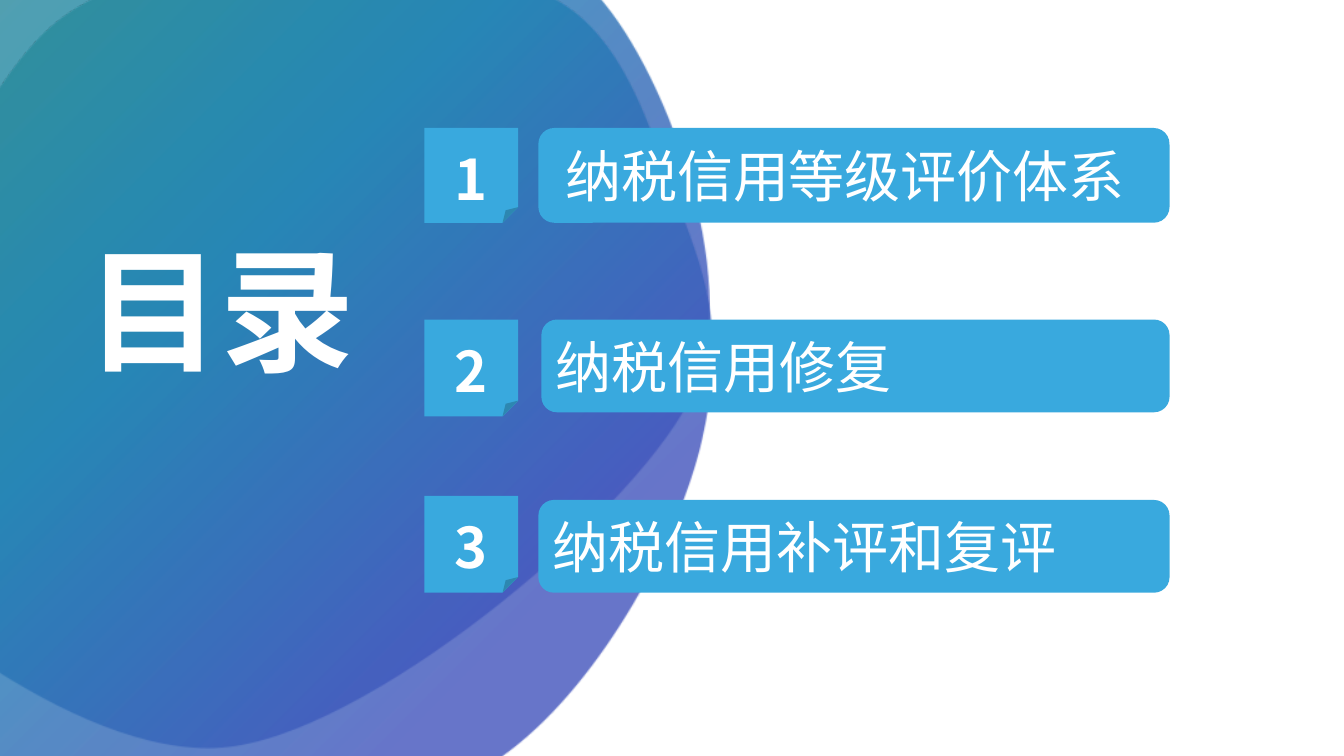
from lxml import etree
from pptx import Presentation
from pptx.dml.color import RGBColor
from pptx.enum.shapes import MSO_SHAPE
from pptx.enum.text import MSO_ANCHOR, MSO_AUTO_SIZE, PP_ALIGN
from pptx.oxml.ns import qn
from pptx.util import Inches, Pt

FOLDED, ROUNDED = MSO_SHAPE.FOLDED_CORNER, MSO_SHAPE.ROUNDED_RECTANGLE
LEFT, CENTER = PP_ALIGN.LEFT, PP_ALIGN.CENTER
MIDDLE, NO_AUTOFIT = MSO_ANCHOR.MIDDLE, MSO_AUTO_SIZE.NONE
TITLE_ONLY = 5
FONT = "Noto Sans CJK SC"
COLORS = {"white": "FFFFFF", "card": "39A9DE", "green": "30918B",
          "teal": "1E83B3", "indigo": "4355BE"}
GRADIENT = [(0, "green"), (40, "teal"), (75, "indigo"), (100, "indigo")]
OPACITY = 80

BACK_BLOB = [
    (-1.95, 2.53),
    (-1.8, 1.75), (-1.62, 1.2), (-0.91, 0.49),
    (-0.2, -0.21), (1.21, -0.98), (2.34, -1.08),
    (3.47, -1.18), (5.15, -0.82), (5.86, -0.11),
    (6.57, 0.6), (7.38, 2.76), (6.88, 3.88),
    (6.39, 5), (3.79, 7.18), (2.34, 7.4),
    (0.89, 7.63), (-1.11, 5.93), (-1.82, 5.22),
    (-2.52, 4.52), (-2.11, 3.32), (-1.95, 2.53),
]
FRONT_BLOB = [
    (6.74, 2.08),
    (7.04, 2.82), (7.18, 3.38), (6.96, 4.36),
    (6.74, 5.33), (5.97, 6.74), (5.07, 7.43),
    (4.17, 8.12), (2.55, 8.72), (1.57, 8.5),
    (0.59, 8.29), (-1.25, 6.9), (-1.43, 5.69),
    (-1.62, 4.47), (-0.59, 1.24), (0.51, 0.27),
    (1.61, -0.7), (4.21, -0.34), (5.18, -0.12),
    (6.16, 0.1), (6.45, 1.33), (6.74, 2.08),
]
NUMBER_LEFT, NUMBER_WIDTH, CARD_RIGHT = 4.21, 0.93, 11.6
ITEMS = [
    {"text": "纳税信用等级评价体系", "number": (1.27, 0.94), "card": (5.34, 1.27, 0.94), "inset": 0.22},
    {"text": "纳税信用修复", "number": (3.17, 0.96), "card": (5.37, 3.17, 0.92), "inset": 0.1},
    {"text": "纳税信用补评和复评", "number": (4.92, 0.96), "card": (5.34, 4.96, 0.92), "inset": 0.1},
]


def rgb(name):
    return RGBColor.from_string(COLORS[name])


def lines_to_curves(shape):
    lines = list(shape.element.iter(qn("a:lnTo")))
    for first in range(0, len(lines), 3):
        curve = etree.Element(qn("a:cubicBezTo"))
        lines[first].addprevious(curve)
        for line in lines[first:first + 3]:
            curve.append(line[0])
            line.getparent().remove(line)


def set_gradient(shape):
    shape.fill.gradient()
    shape.fill.gradient_angle = 315
    stops = shape.element.spPr.find(qn("a:gradFill")).find(qn("a:gsLst"))
    for stop in list(stops):
        stops.remove(stop)
    for position, color in GRADIENT:
        stop = etree.SubElement(stops, qn("a:gs"), pos=str(position * 1000))
        value = etree.SubElement(stop, qn("a:srgbClr"), val=COLORS[color])
        etree.SubElement(value, qn("a:alpha"), val=str(OPACITY * 1000))


def add_blob(slide, controls):
    points = [(Inches(x), Inches(y)) for x, y in controls]
    builder = slide.shapes.build_freeform(*points[0], scale=1.0)
    builder.add_line_segments(points[1:], close=True)
    shape = builder.convert_to_shape()
    lines_to_curves(shape)
    shape.shadow.inherit = False
    shape.line.fill.background()
    set_gradient(shape)


def write_text(shape, text, size, alignment, bold=False, spacing=1.0):
    frame = shape.text_frame
    for name, value in {"word_wrap": True, "auto_size": NO_AUTOFIT,
                        "vertical_anchor": MIDDLE}.items():
        setattr(frame, name, value)
    paragraph = frame.paragraphs[0]
    paragraph.alignment = alignment
    paragraph.line_spacing = spacing
    run = paragraph.add_run()
    run.text = text
    for name, value in {"size": Pt(size), "bold": bold, "name": FONT}.items():
        setattr(run.font, name, value)
    run.font.color.rgb = rgb("white")
    etree.SubElement(run.font._element, qn("a:ea"), typeface=FONT)


def add_card(slide, preset, box):
    shape = slide.shapes.add_shape(preset, *map(Inches, box))
    shape.shadow.inherit = False
    shape.fill.solid()
    shape.fill.fore_color.rgb = rgb("card")
    shape.line.fill.background()
    return shape


def add_item(slide, number, item):
    top, height = item["number"]
    badge = add_card(slide, FOLDED, (NUMBER_LEFT, top, NUMBER_WIDTH, height))
    write_text(badge, str(number), 40, CENTER, bold=True, spacing=1.3)
    left, top, height = item["card"]
    card = add_card(slide, ROUNDED, (left, top, CARD_RIGHT - left, height))
    write_text(card, item["text"], 40, LEFT)
    card.text_frame.margin_left = Inches(item["inset"])


def place_title(slide, left, top, width, height):
    title = slide.shapes.title
    for name, value in {"left": left, "top": top, "width": width, "height": height}.items():
        setattr(title, name, Inches(value))
    write_text(title, "目录", 96, CENTER, bold=True)
    slide.shapes.element.append(title.element)


def build_contents_slide(presentation):
    slide = presentation.slides.add_slide(presentation.slide_layouts[TITLE_ONLY])
    for controls in (BACK_BLOB, FRONT_BLOB):
        add_blob(slide, controls)
    place_title(slide, 0.67, 2.22, 3.04, 1.67)
    for number, item in enumerate(ITEMS, 1):
        add_item(slide, number, item)


def main():
    presentation = Presentation()
    presentation.slide_width = Inches(13.33)
    presentation.slide_height = Inches(7.5)
    build_contents_slide(presentation)
    presentation.save("out.pptx")


if __name__ == "__main__":
    main()
